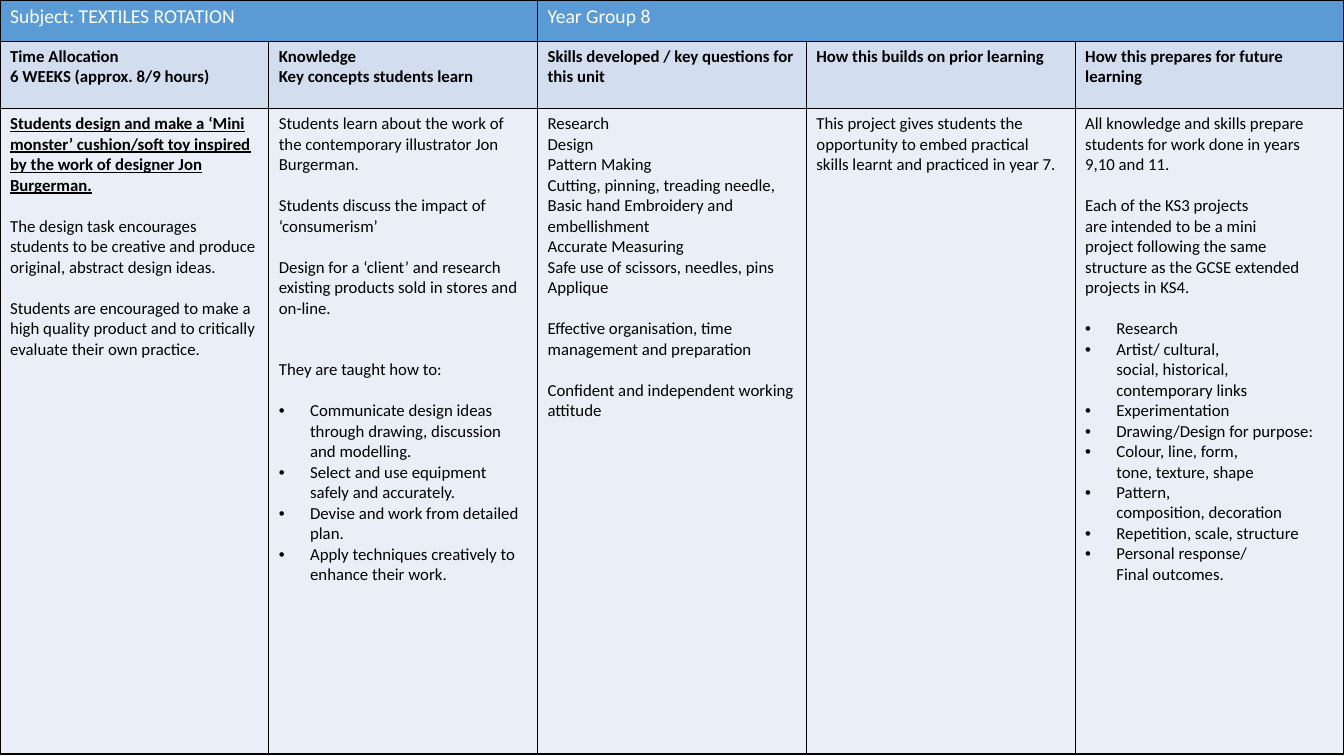
from lxml import etree
from pptx import Presentation
from pptx.dml.color import RGBColor
from pptx.oxml.ns import qn
from pptx.util import Inches, Pt

SLIDE_WIDTH, SLIDE_HEIGHT = 13.33, 7.5
COLUMN_COUNT = 5
ROW_HEIGHTS = [0.41, 0.67, 6.4]
LINE_PITCH = 14.65
BULLET_INDENT = 0.31

TITLE = {"size": Pt(14)}
HEADING = {"size": Pt(12), "bold": True}
BODY = {"size": Pt(12), "bold": False}
TASK = {"size": Pt(12), "bold": True, "underline": True}

# Text: "~" stands for a no-break space
TITLES = [(0, 1, "Subject: TEXTILES ROTATION"), (2, 4, "Year Group 8")]
HEADINGS = [
    ["Time Allocation~", "6 WEEKS~(approx. 8/9 hours)"],
    ["Knowledge", "Key concepts students learn"],
    ["Skills developed / key questions for this unit"],
    ["How this builds on prior learning"],
    ["How this prepares for future learning"],
]


def block(*lines, gap=1, bullet=False, style=BODY):
    """Lines that belong together; gap is the number of lines left above."""
    return {"lines": lines, "gap": gap, "bullet": bullet, "style": style}


DETAILS = [
    [
        block("Students design and make a ‘Mini monster’ cushion/soft toy inspired "
              "by the work of designer Jon Burgerman.", gap=0, style=TASK),
        block("The design task encourages students to be creative and produce "
              "original, abstract design ideas."),
        block("Students are encouraged to make a high quality product and to "
              "critically evaluate their own practice.~"),
    ],
    [
        block("Students learn about the work of the contemporary illustrator "
              "Jon Burgerman.", gap=0),
        block("Students discuss the impact of ‘consumerism’"),
        block("Design for a ‘client’ and research existing products sold in "
              "stores and on-line.~"),
        block("They are taught how to:", gap=2),
        block("Communicate design ideas through drawing, discussion and modelling.~",
              "Select and use equipment safely and accurately.~",
              "Devise and work from detailed plan.~",
              "Apply techniques creatively to enhance their work.~", bullet=True),
    ],
    [
        block("Research", "Design", "Pattern Making",
              "Cutting, pinning, treading needle,~",
              "Basic hand Embroidery and embellishment", "Accurate Measuring",
              "Safe use of scissors, needles, pins", "Applique", gap=0),
        block("Effective organisation, time management and preparation"),
        block("Confident and independent working attitude~"),
    ],
    [
        block("This project gives students the opportunity to embed practical "
              "skills learnt and practiced in year 7.~", gap=0),
    ],
    [
        block("All knowledge and skills prepare students for work done in "
              "years 9,10 and 11.", gap=0),
        block("Each of the KS3 projects are~intended to be a mini "
              "project~following the same structure~as the GCSE extended "
              "projects~in KS4."),
        block("Research", "Artist/ cultural, social,~historical, contemporary~links",
              "Experimentation~", "Drawing/Design for~purpose:~",
              "Colour, line, form, tone,~texture, shape",
              "Pattern, composition,~decoration", "Repetition, scale, structure",
              "Personal response/ Final~outcomes.", bullet=True),
    ],
]


def colour(value):
    return RGBColor.from_string(value)


class CurriculumSlide:
    font = "Calibri"
    border = "000000"

    def __init__(self, deck):
        self.page = deck.slides.add_slide(deck.slide_layouts[6])

    def table(self, width, heights, columns):
        frame = self.page.shapes.add_table(
            len(heights), columns, Inches(0), Inches(0),
            Inches(width), Inches(sum(heights)))
        grid = frame.table
        for column in grid.columns:
            column.width = Inches(width / columns)
        for row, height in zip(grid.rows, heights):
            row.height = Inches(height)
        return grid

    def paint(self, cell, fill):
        properties = cell._tc.get_or_add_tcPr()
        for side in ("a:lnL", "a:lnR", "a:lnT", "a:lnB"):
            line = etree.SubElement(properties, qn(side), w=str(Pt(1)))
            solid = etree.SubElement(line, qn("a:solidFill"))
            etree.SubElement(solid, qn("a:srgbClr"), val=self.border)
        cell.fill.solid()
        cell.fill.fore_color.rgb = colour(fill)

    def bullet(self, para):
        properties = para._p.get_or_add_pPr()
        properties.set("marL", str(Inches(BULLET_INDENT)))
        properties.set("indent", str(-Inches(BULLET_INDENT)))
        etree.SubElement(properties, qn("a:buFont"), typeface="Arial")
        etree.SubElement(properties, qn("a:buChar"), char="•")

    def fill_text(self, cell, blocks, text_colour="000000"):
        frame = cell.text_frame
        para = None
        for part in blocks:
            for index, text in enumerate(part["lines"]):
                para = frame.add_paragraph() if para else frame.paragraphs[0]
                if index == 0 and part["gap"]:
                    para.space_before = Pt(part["gap"] * LINE_PITCH)
                if part["bullet"]:
                    self.bullet(para)
                span = para.add_run()
                span.text = text.replace("~", chr(160))
                span.font.name = self.font
                span.font.color.rgb = colour(text_colour)
                for name, value in part["style"].items():
                    setattr(span.font, name, value)


def main():
    deck = Presentation()
    deck.slide_width, deck.slide_height = Inches(SLIDE_WIDTH), Inches(SLIDE_HEIGHT)
    slide = CurriculumSlide(deck)
    grid = slide.table(SLIDE_WIDTH, ROW_HEIGHTS, COLUMN_COUNT)

    # Row colours and borders
    for row, fill in enumerate(["5B9BD5", "D2DEEF", "EAEFF7"]):
        for column in range(COLUMN_COUNT):
            slide.paint(grid.cell(row, column), fill)

    # Title row
    for first, last, text in TITLES:
        grid.cell(0, first).merge(grid.cell(0, last))
        slide.fill_text(grid.cell(0, first), [block(text, gap=0, style=TITLE)], "FFFFFF")

    # Headings and details
    for column, (heading, details) in enumerate(zip(HEADINGS, DETAILS)):
        slide.fill_text(grid.cell(1, column), [block(*heading, gap=0, style=HEADING)])
        slide.fill_text(grid.cell(2, column), details)

    deck.save("out.pptx")


if __name__ == "__main__":
    main()
